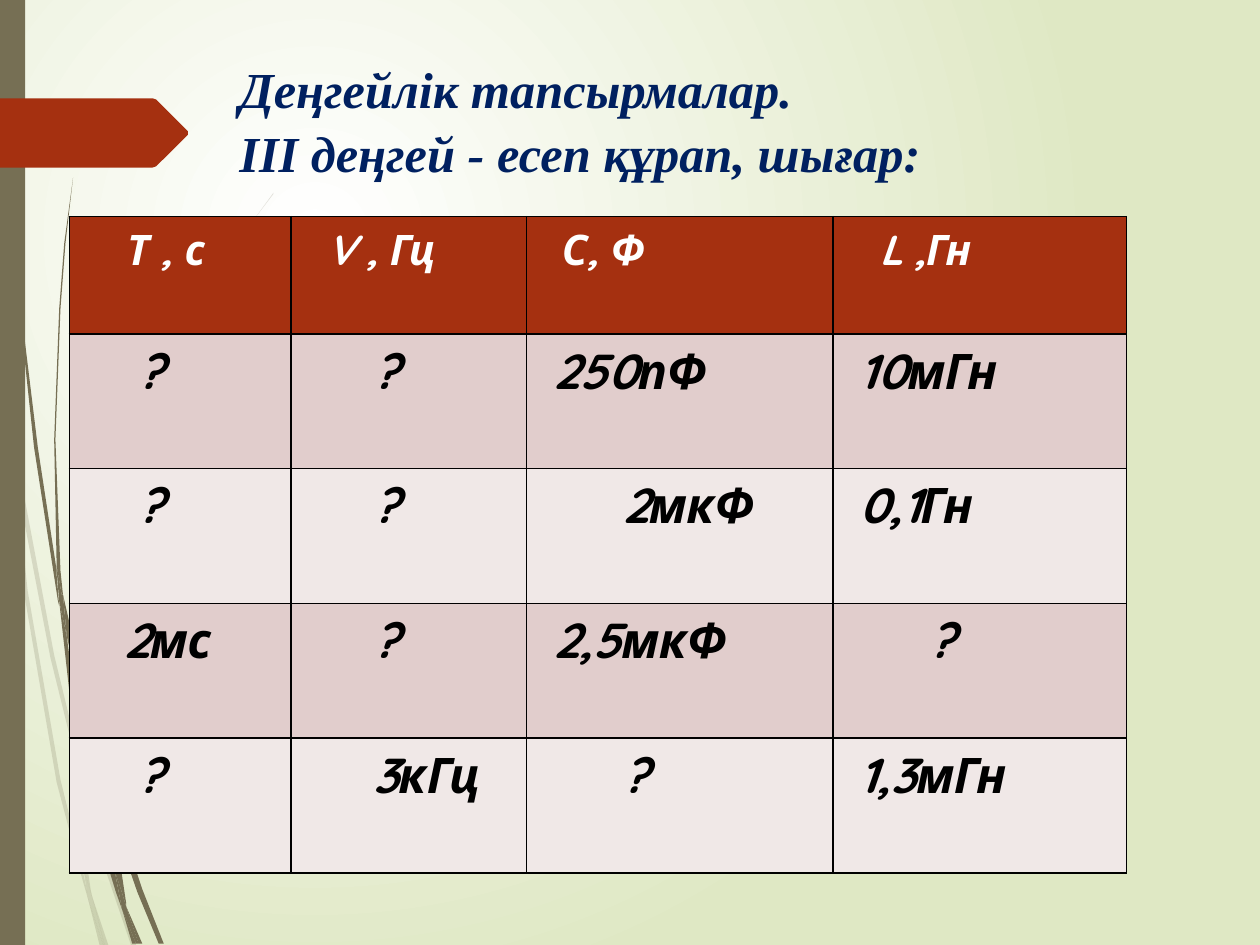
from lxml import etree
from pptx import Presentation
from pptx.dml import color
from pptx.enum import shapes, text
from pptx.oxml import ns
from pptx.util import Inches, Pt

BROWN, RED = "766F54", "A53010"


def rgb(code):
    return color.RGBColor.from_string(code)


def draw_outline(points, code, alpha=None):
    """Draw a closed filled outline; points are in hundredths of an inch."""
    builder = page.shapes.build_freeform(*points[0], scale=Inches(0.01))
    builder.add_line_segments(points[1:], close=True)
    shape = builder.convert_to_shape()
    shape.shadow.inherit = False
    shape.line.fill.background()
    shape.fill.solid()
    shape.fill.fore_color.rgb = rgb(code)
    if alpha:
        tint = shape.fill._xPr.find(".//" + ns.qn("a:srgbClr"))
        etree.SubElement(tint, ns.qn("a:alpha"), val=str(alpha * 1000))


deck = Presentation()
deck.slide_width, deck.slide_height = Inches(10), Inches(7.5)
page = deck.slides.add_slide(deck.slide_layouts[5])

# Background: radial gradient centred in the upper left quarter
backdrop = page.background.fill
backdrop.gradient()
for stop, code in zip(backdrop.gradient_stops, ("FFFFFF", "DFE8C4")):
    stop.color.rgb = rgb(code)
    stop.position = 0 if code == "FFFFFF" else 1
gradient = page._element.find(".//" + ns.qn("a:gradFill"))
gradient.remove(gradient.find(ns.qn("a:lin")))
circle = etree.SubElement(gradient, ns.qn("a:path"), path="circle")
etree.SubElement(circle, ns.qn("a:fillToRect"),
                 l="50000", t="50000", r="100000", b="100000")

# Grass blades: pale ones behind, solid ones in front
pale_blades = [
    [(8, 350), (6, 322), (0, 282), (0, 299), (7, 344)],
    [(40, 522), (59, 599), (59, 586), (43, 520), (10, 345), (12, 376)],
    [(64, 607), (61, 596), (61, 610), (85, 694), (104, 750), (108, 750), (88, 692)],
    [(83, 750), (86, 750), (73, 711)],
    [(64, 683), (48, 619), (22, 469), (12, 376), (8, 350), (19, 470), (45, 621),
     (64, 693), (70, 714), (69, 707)],
    [(58, 599), (60, 646), (64, 683), (67, 692), (73, 711), (72, 706), (63, 646),
     (61, 610), (61, 608)],
    [(61, 584), (76, 462), (111, 349), (159, 245), (187, 198), (201, 175), (217, 154),
     (217, 153), (201, 175), (186, 197), (158, 244), (110, 348), (75, 461), (59, 584),
     (59, 586), (61, 596)],
    [(70, 714), (79, 750), (82, 750)],
    [(61, 608), (61, 610), (61, 596), (59, 586), (58, 599)],
    [(67, 692), (65, 683), (69, 707), (70, 714), (82, 750), (83, 750), (73, 711)],
]
solid_blades = [
    [(5, 110), (14, 233), (27, 355), (46, 477), (47, 481), (45, 457), (45, 453),
     (30, 355), (15, 232), (6, 109), (4, 48), (3, 0), (2, 0), (3, 48)],
    [(73, 592), (88, 645), (88, 633), (88, 631), (77, 590), (50, 472), (53, 505)],
    [(94, 649), (91, 641), (91, 656), (109, 708), (126, 749), (130, 749), (113, 706)],
    [(91, 691), (81, 657), (60, 556), (53, 505), (47, 477), (56, 557), (77, 659),
     (92, 708), (97, 722), (96, 717)],
    [(50, 472), (48, 453), (44, 349), (48, 245), (52, 193), (58, 141), (51, 193),
     (47, 245), (43, 349), (45, 449), (49, 472)],
    [(110, 749), (113, 749), (100, 719)],
    [(47, 477), (53, 505), (50, 472), (49, 472), (45, 449), (45, 453)],
    [(91, 633), (103, 552), (131, 476), (169, 406), (191, 374), (203, 359), (216, 344),
     (215, 344), (203, 358), (191, 373), (168, 405), (129, 474), (101, 551), (88, 631),
     (91, 641)],
    [(97, 722), (105, 749), (108, 749)],
    [(88, 645), (91, 691), (96, 706), (100, 719), (100, 716), (91, 656), (90, 651)],
    [(88, 645), (90, 651), (91, 656), (91, 641), (88, 631), (88, 633)],
    [(96, 706), (91, 691), (96, 717), (97, 722), (108, 749), (110, 749), (100, 719)],
]
for blades, alpha in ((pale_blades, 20), (solid_blades, None)):
    for blade in blades:
        draw_outline(blade, BROWN, alpha)

# Side bar and page marker
bar = page.shapes.add_shape(shapes.MSO_SHAPE.RECTANGLE, 0, 0, Inches(0.2), Inches(7.5))
bar.shadow.inherit = False
bar.fill.solid()
bar.fill.fore_color.rgb = rgb(BROWN)
bar.line.fill.background()
draw_outline([(0, 78), (121, 78), (124, 79), (149, 104), (149, 107), (124, 132),
              (121, 133), (0, 133)], RED)

# Title
title = page.shapes.title
title.left, title.top = Inches(1.8), Inches(0.39)
title.width, title.height = Inches(7.21), Inches(1.11)
frame = title.text_frame
frame.word_wrap = True
frame.auto_size = text.MSO_AUTO_SIZE.NONE
frame.vertical_anchor = text.MSO_ANCHOR.MIDDLE
para = frame.paragraphs[0]
para.text = "Деңгейлік тапсырмалар.\vІІІ деңгей - есеп құрап, шығар:"
para.alignment = text.PP_ALIGN.LEFT
para.line_spacing = 1.05
for span in para.runs:
    for name, value in {"name": "Times New Roman", "size": Pt(28.8),
                        "bold": True, "italic": True}.items():
        setattr(span.font, name, value)
    span.font.color.rgb = rgb("002060")

# Table of quantities: each cell is (indent steps, text)
rows = [
    [(4, "Т , с"), (2, "V , Гц"), (2, "С, Ф"), (3, "L ,Гн")],
    [(4, "?"), (5, "?"), (1, "250пФ"), (1, "10мГн")],
    [(4, "?"), (5, "?"), (6, "2мкФ"), (1, "0,1Гн")],
    [(3, "2мс"), (5, "?"), (1, "2,5мкФ"), (6, "?")],
    [(4, "?"), (5, "3кГц"), (6, "?"), (1, "1,3мГн")],
]
widths = [1.76, 1.87, 2.43, 2.33]
heights = [0.93] + [1.07] * 4
table = page.shapes.add_table(len(rows), len(widths), Inches(0.55), Inches(1.72),
                              Inches(sum(widths)), Inches(sum(heights))).table
table.horz_banding = False
for column, width in zip(table.columns, widths):
    column.width = Inches(width)
for r, row in enumerate(rows):
    table.rows[r].height = Inches(heights[r])
    header = r == 0
    fill = RED if header else ("F0E8E7", "E1CDCC")[r % 2]
    for c, (steps, words) in enumerate(row):
        cell = table.cell(r, c)
        cell.margin_left = Inches(0.1 + steps * (0.09 if header else 0.11))
        para = cell.text_frame.paragraphs[0]
        span = para.add_run()
        span.text = words
        for name, value in {"name": "Quicksand", "size": Pt(24 if header else 28),
                            "bold": True, "italic": True}.items():
            setattr(span.font, name, value)
        span.font.color.rgb = rgb("FFFFFF" if header else "000000")
        # Borders come before the fill in the cell properties
        props = cell._tc.get_or_add_tcPr()
        for side in ("lnL", "lnR", "lnT", "lnB"):
            edge = etree.SubElement(props, ns.qn("a:" + side), w=str(Pt(1)))
            ink = etree.SubElement(edge, ns.qn("a:solidFill"))
            etree.SubElement(ink, ns.qn("a:srgbClr"), val="000000")
        cell.fill.solid()
        cell.fill.fore_color.rgb = rgb(fill)

deck.save("out.pptx")
